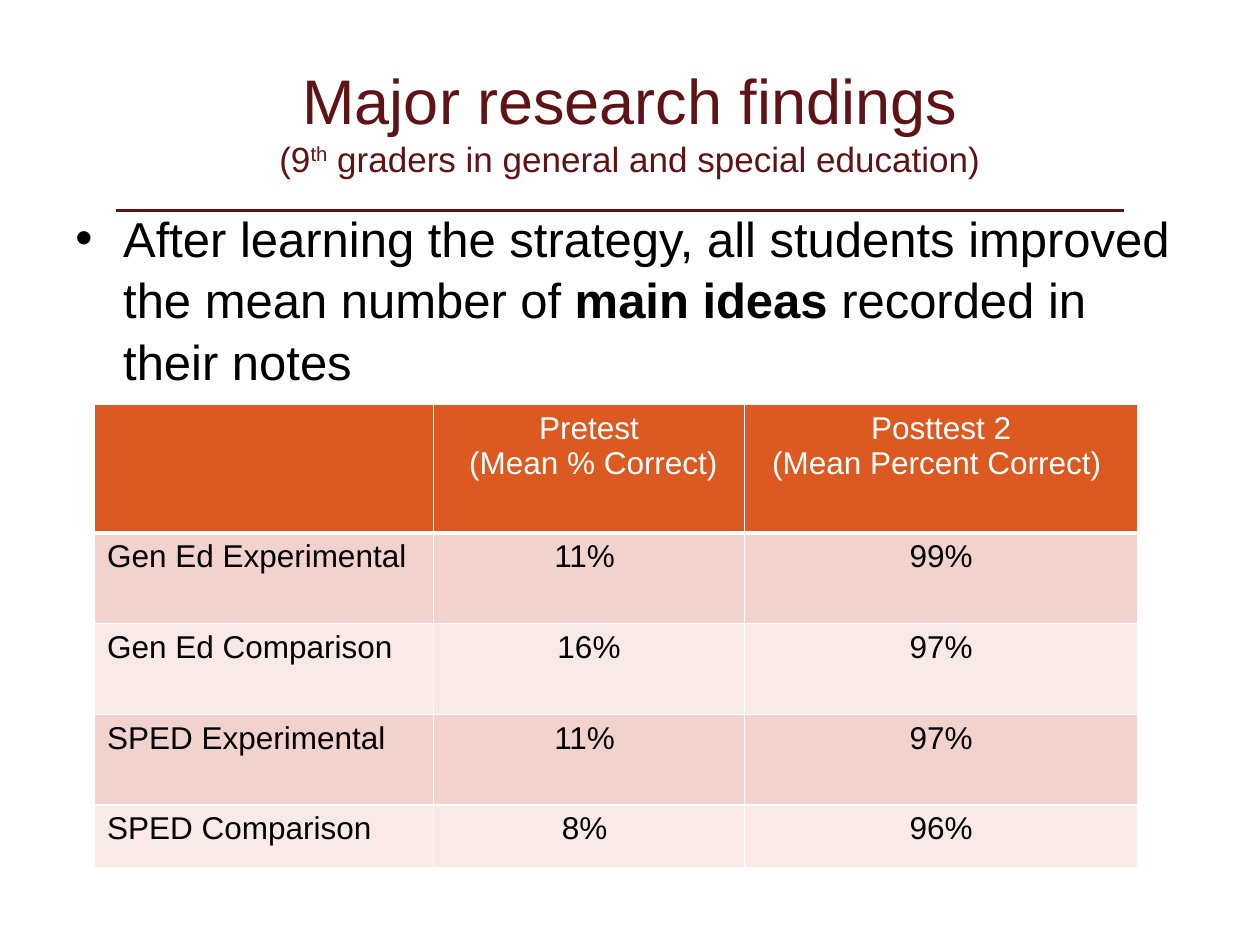
"""Build a slide of research findings with a title, a bullet and a results table."""
import pptx
import pptx.dml.color
import pptx.enum.shapes
import pptx.enum.text
import pptx.oxml.ns
import pptx.util
from lxml import etree

Inches = pptx.util.Inches
Pt = pptx.util.Pt
ALIGN = pptx.enum.text.PP_ALIGN
ANCHOR = pptx.enum.text.MSO_ANCHOR
qn = pptx.oxml.ns.qn

COLORS = {"maroon": "601314", "black": "000000", "white": "FFFFFF",
          "header": "DC5A21", "odd": "F2D2CD", "even": "F9EAE8"}
TITLE = "Major research findings"
SUBTITLE = [("(9", False), ("th", True),
            (" graders in general and special education)", False)]
FINDING = [("After learning the strategy, all students improved the mean number of ", False),
           ("main ideas ", True), ("recorded in their notes", False)]
RESULTS = [
    ("", "Pretest\n (Mean % Correct)", "Posttest 2\n(Mean Percent Correct) "),
    ("Gen Ed Experimental", "11% ", "99%"),
    ("Gen Ed Comparison", "16%", "97%"),
    ("SPED Experimental", "11% ", "97%"),
    ("SPED Comparison", "8% ", "96%"),
]
COLUMN_WIDTHS = [2.69, 2.47, 3.12]
ROW_HEIGHTS = [1.02, 0.72, 0.72, 0.72, 0.5]


def rgb(name):
    return pptx.dml.color.RGBColor.from_string(COLORS[name])


def style(font, size, color, bold=False):
    font.name = "Arial"
    font.size = Pt(size)
    font.bold = bold
    font.color.rgb = rgb(color)


def add_span(para, text, size, color, bold=False):
    span = para.add_run()
    span.text = text
    style(span.font, size, color, bold)
    return span


def add_box(slide, left, top, width, height, anchor):
    box = slide.shapes.add_textbox(Inches(left), Inches(top), Inches(width), Inches(height))
    box.text_frame.word_wrap = True
    box.text_frame.vertical_anchor = anchor
    return box.text_frame.paragraphs[0]


def add_rule(slide):
    rule = slide.shapes.add_connector(pptx.enum.shapes.MSO_CONNECTOR.STRAIGHT,
                                      Inches(0.92), Inches(1.67), Inches(8.92), Inches(1.67))
    rule.line.color.rgb = rgb("maroon")
    rule.line.width = Pt(1.5)
    etree.SubElement(rule._element.spPr, qn("a:effectLst"))


def add_title(slide):
    para = add_box(slide, 0.75, 0.33, 8.5, 1.25, ANCHOR.MIDDLE)
    para.alignment = ALIGN.CENTER
    add_span(para, TITLE, 36, "maroon")
    para.add_line_break()
    for text, raised in SUBTITLE:
        span = add_span(para, text, 20, "maroon")
        if raised:
            span._r.get_or_add_rPr().set("baseline", "30000")


def add_finding(slide):
    para = add_box(slide, 0.5, 1.58, 9, 5.42, ANCHOR.TOP)
    para.line_spacing = 1.05
    properties = para._p.get_or_add_pPr()
    properties.set("marL", str(Inches(0.38)))
    properties.set("indent", str(Inches(-0.38)))
    etree.SubElement(properties, qn("a:buFont"), typeface="Arial")
    etree.SubElement(properties, qn("a:buChar"), char="•")
    for text, bold in FINDING:
        add_span(para, text, 28, "black", bold)


def add_borders(cell, bottom_width):
    properties = cell._tc.get_or_add_tcPr()
    for side, width in (("L", 1), ("R", 1), ("T", 1), ("B", bottom_width)):
        line = etree.SubElement(properties, qn("a:ln" + side), w=str(Pt(width)))
        fill = etree.SubElement(line, qn("a:solidFill"))
        etree.SubElement(fill, qn("a:srgbClr"), val=COLORS["white"])


def add_results(slide):
    table = slide.shapes.add_table(
        len(RESULTS), len(COLUMN_WIDTHS), Inches(0.75), Inches(3.21),
        Inches(sum(COLUMN_WIDTHS)), Inches(sum(ROW_HEIGHTS))).table
    for column, width in zip(table.columns, COLUMN_WIDTHS):
        column.width = Inches(width)
    for row, height in zip(table.rows, ROW_HEIGHTS):
        row.height = Inches(height)
    for i, values in enumerate(RESULTS):
        fill = "header" if i == 0 else ("odd" if i % 2 else "even")
        for j, value in enumerate(values):
            cell = table.cell(i, j)
            add_borders(cell, 3 if i == 0 else 1)
            cell.fill.solid()
            cell.fill.fore_color.rgb = rgb(fill)
            cell.text_frame.text = value
            for para in cell.text_frame.paragraphs:
                para.alignment = ALIGN.CENTER if j else ALIGN.LEFT
                for span in para.runs:
                    style(span.font, 18, "black" if i else "white")


def main():
    deck = pptx.Presentation()
    deck.slide_width, deck.slide_height = Inches(10), Inches(7.5)
    slide = deck.slides.add_slide(deck.slide_layouts[6])
    slide.background.fill.solid()
    slide.background.fill.fore_color.rgb = rgb("white")
    add_rule(slide)
    add_title(slide)
    add_finding(slide)
    add_results(slide)
    deck.save("out.pptx")


if __name__ == "__main__":
    main()
